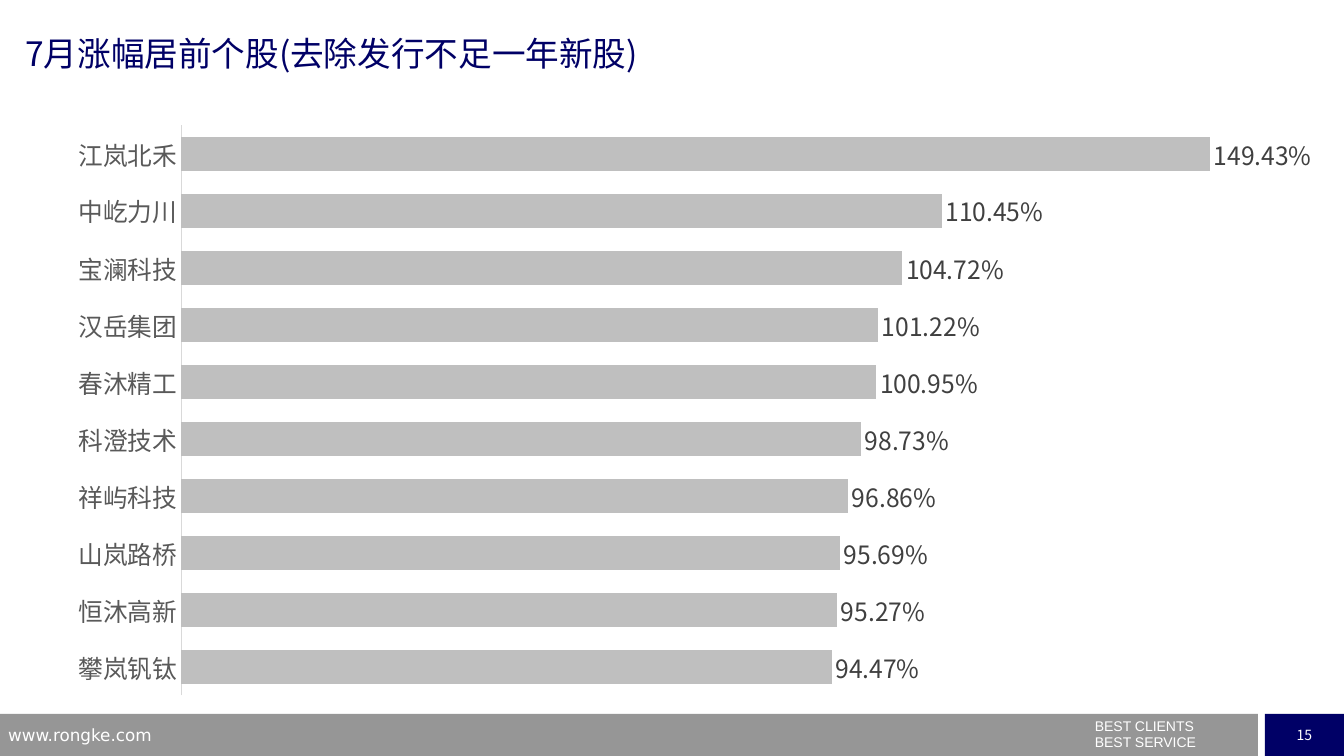
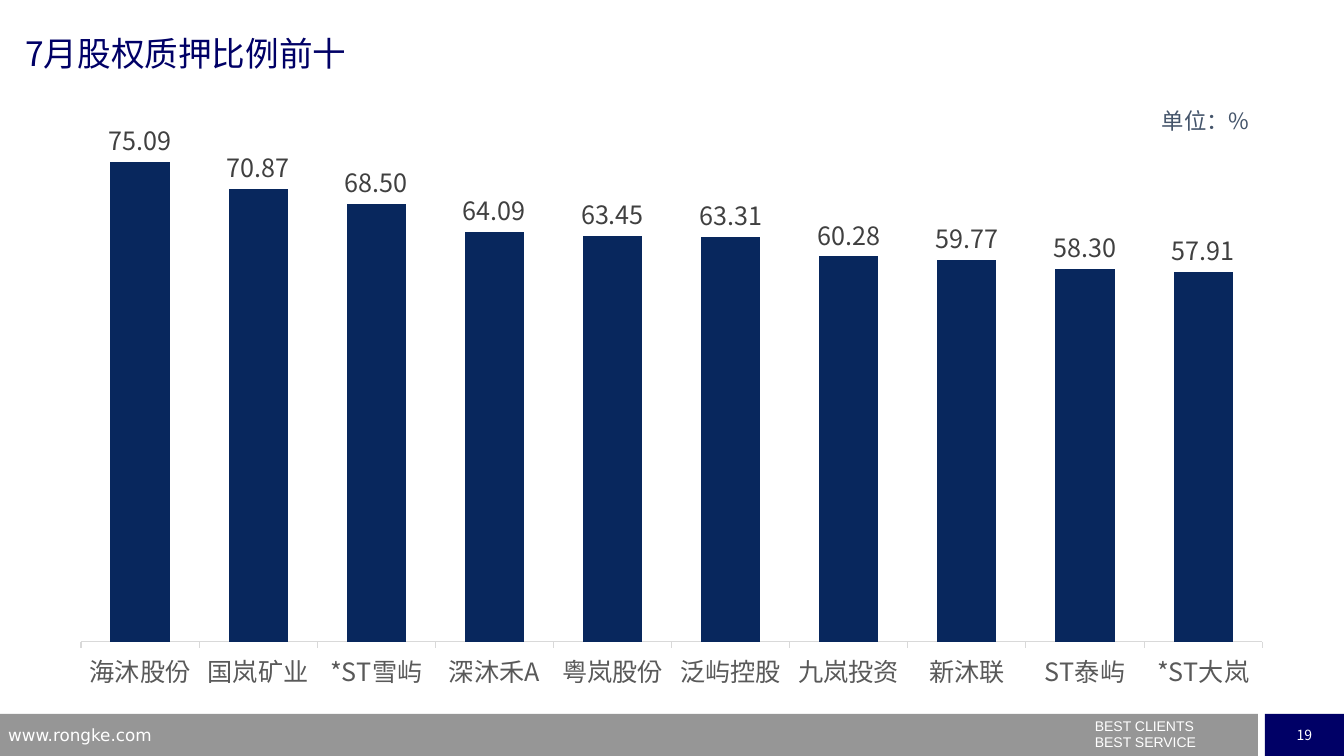
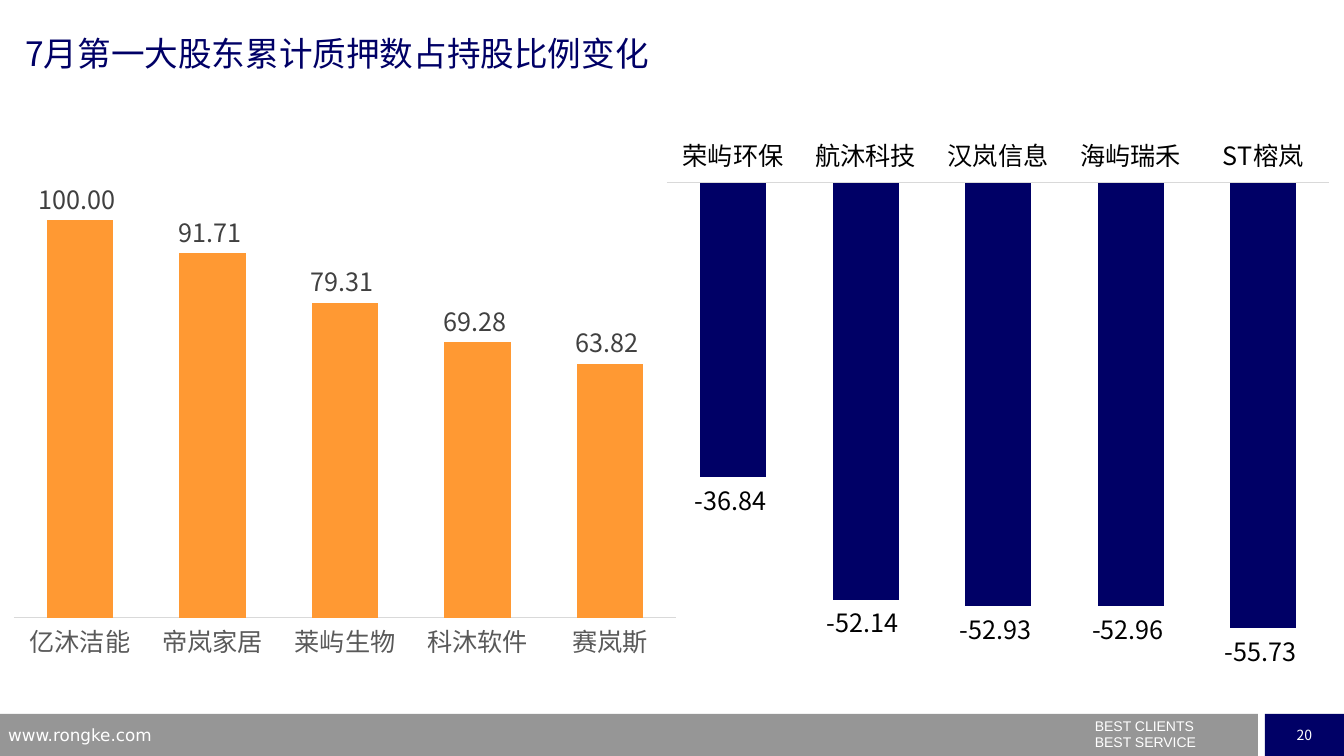
from lxml.etree import SubElement
from pptx import Presentation
from pptx.chart.data import CategoryChartData
from pptx.dml.color import RGBColor
from pptx.enum.chart import XL_CHART_TYPE as ChartType
from pptx.enum.chart import XL_LABEL_POSITION as LabelPosition
from pptx.enum.chart import XL_TICK_LABEL_POSITION as TickLabels
from pptx.enum.chart import XL_TICK_MARK as TickMark
from pptx.enum.shapes import MSO_SHAPE as Shape
from pptx.enum.text import MSO_ANCHOR as Anchor
from pptx.enum.text import MSO_AUTO_SIZE as AutoSize
from pptx.enum.text import PP_ALIGN as Align
from pptx.oxml.ns import qn
from pptx.util import Pt

NAVY = RGBColor(0x00, 0x00, 0x66)
DEEP_BLUE = RGBColor(0x08, 0x27, 0x5D)
ORANGE = RGBColor(0xFF, 0x99, 0x33)
BAND_GREY = RGBColor(0x96, 0x96, 0x96)
BAR_GREY = RGBColor(0xBF, 0xBF, 0xBF)
AXIS_GREY = RGBColor(0xD9, 0xD9, 0xD9)
AXIS_TEXT = RGBColor(0x59, 0x59, 0x59)
LABEL_TEXT = RGBColor(0x40, 0x40, 0x40)
SLATE = RGBColor(0x44, 0x54, 0x6A)
BLACK = RGBColor(0x00, 0x00, 0x00)
WHITE = RGBColor(0xFF, 0xFF, 0xFF)

SANS = "Noto Sans CJK SC"
SANS_JP = "Noto Sans CJK JP"
WIDTH, HEIGHT = 960, 540
FOOTER = (0, 510, WIDTH, 30)
TITLE = (18, 23, 648, 30)
TWO_DECIMALS = "#,##0.00"
PADDED = "#,##0.00_ "


# Text and shapes
def points(box):
    return [Pt(length) for length in box]


def style_font(font, name, size, color):
    """Format Latin and East Asian text alike."""
    font.name = name
    font.size = Pt(size)
    font.color.rgb = color
    SubElement(font._rPr, qn("a:ea")).set("typeface", name)


def write(frame, text, font=SANS, size=10, color=WHITE, align=Align.LEFT,
          anchor=Anchor.TOP, insets=(0, 0, 0, 0), wrap=True,
          line_spacing=None, space_before=0):
    frame.auto_size = AutoSize.NONE
    frame.word_wrap = wrap
    frame.vertical_anchor = anchor
    (frame.margin_left, frame.margin_top,
     frame.margin_right, frame.margin_bottom) = points(insets)
    for index, line in enumerate(text.split("\n")):
        para = frame.add_paragraph() if index else frame.paragraphs[0]
        para.alignment = align
        if line_spacing:
            para.line_spacing = line_spacing
        if index:
            para.space_before = Pt(space_before)
        span = para.add_run()
        span.text = line
        style_font(span.font, font, size, color)


def add_text(page, box, text, **style):
    write(page.shapes.add_textbox(*points(box)).text_frame, text, **style)


def add_band(page, box, color):
    band = page.shapes.add_shape(Shape.RECTANGLE, *points(box))
    band.shadow.inherit = False
    band.fill.solid()
    band.fill.fore_color.rgb = color
    band.line.fill.background()
    return band


# Parts shared by every slide
def add_footer(page, box, number):
    left, top, width, height = box
    number_width, gap = 56.5, 5
    number_left = left + width - number_width
    add_band(page, (left, top, number_left - gap - left, height), BAND_GREY)
    number_band = add_band(page, (number_left, top, number_width, height), NAVY)
    write(number_band.text_frame, str(number), align=Align.CENTER,
          anchor=Anchor.MIDDLE, wrap=False)
    add_text(page, (left + 775, top + 4, 184, 26), "BEST CLIENTS\nBEST SERVICE",
             font="Arial", insets=(7.2, 3.6, 7.2, 3.6),
             line_spacing=0.5, space_before=5.5)
    add_text(page, (left, top + 4, 230, 19), "www.rongke.com",
             font="DejaVu Sans", size=12, insets=(5.8, 3.6, 7.2, 3.6))


def add_page(deck, title, number):
    page = deck.slides.add_slide(deck.slide_layouts[5])
    heading = page.shapes.title
    heading.left, heading.top, heading.width, heading.height = points(TITLE)
    write(heading.text_frame, title, size=24, color=NAVY, anchor=Anchor.MIDDLE)
    add_footer(page, FOOTER, number)
    return page


# Charts
def place_plot(chart, area):
    """Fix the inner plot area, given as fractions of the chart."""
    plot_area = chart._chartSpace.chart.plotArea
    for old in plot_area.findall(qn("c:layout")):
        plot_area.remove(old)
    layout = SubElement(plot_area, qn("c:layout"))
    plot_area.insert(0, layout)
    manual = SubElement(layout, qn("c:manualLayout"))
    settings = [("layoutTarget", "inner"), ("xMode", "edge"), ("yMode", "edge")]
    settings += zip("xywh", area)
    for tag, value in settings:
        SubElement(manual, qn("c:" + tag)).set("val", str(value))


def add_bars(page, box, values, color, kind=ChartType.COLUMN_CLUSTERED,
             number_format=PADDED, font=SANS, gap=100, overlap=-27,
             axis_color=AXIS_TEXT, label_color=LABEL_TEXT, area=None,
             tick=TickMark.NONE, tick_labels=TickLabels.NEXT_TO_AXIS,
             reverse=False, limits=None):
    data = CategoryChartData(number_format=number_format)
    data.categories = list(values)
    data.add_series("Series 1", list(values.values()))
    chart = page.shapes.add_chart(kind, *points(box), data).chart
    chart.has_title = False
    chart.has_legend = False
    style_font(chart.font, font, 18, BLACK)

    categories = chart.category_axis
    categories.reverse_order = reverse
    categories.has_major_gridlines = False
    categories.major_tick_mark = tick
    categories.minor_tick_mark = TickMark.NONE
    categories.tick_label_position = tick_labels
    categories.format.line.color.rgb = AXIS_GREY
    categories.format.line.width = Pt(0.75)
    style_font(categories.tick_labels.font, font, 18, axis_color)

    scale = chart.value_axis
    scale.has_major_gridlines = False
    scale.visible = False
    if limits:
        scale.minimum_scale, scale.maximum_scale = limits

    plot = chart.plots[0]
    plot.vary_by_categories = False
    plot.gap_width = gap
    plot.overlap = overlap
    series = plot.series[0]
    series.invert_if_negative = False
    series.format.fill.solid()
    series.format.fill.fore_color.rgb = color

    plot.has_data_labels = True
    labels = plot.data_labels
    labels.show_value = True
    labels.position = LabelPosition.OUTSIDE_END
    labels.number_format = number_format
    labels.number_format_is_linked = False
    style_font(labels.font, font, 18, label_color)
    if area:
        place_plot(chart, area)


# Slides
def build_gainers(deck):
    page = add_page(deck, "7月涨幅居前个股(去除发行不足一年新股)", 15)
    gains = {
        "江岚北禾": 1.4943, "中屹力川": 1.1045, "宝澜科技": 1.0472,
        "汉岳集团": 1.0122, "春沐精工": 1.0095, "科澄技术": 0.9873,
        "祥屿科技": 0.9686, "山岚路桥": 0.9569, "恒沐高新": 0.9527,
        "攀岚钒钛": 0.9447,
    }
    add_bars(page, (18, 78.5, 919, 430), gains, BAR_GREY,
             kind=ChartType.BAR_CLUSTERED, number_format="0.00%", gap=70,
             overlap=0, reverse=True, area=(0.124, 0.026, 0.876, 0.947))


def build_pledges(deck):
    page = add_page(deck, "7月股权质押比例前十", 19)
    ratios = {
        "海沐股份": 75.09, "国岚矿业": 70.87, "*ST雪屿": 68.5,
        "深沐禾A": 64.09, "粤岚股份": 63.45, "泛屿控股": 63.31,
        "九岚投资": 60.28, "新沐联": 59.77, "ST泰屿": 58.3, "*ST大岚": 57.91,
    }
    add_bars(page, (57.5, 77, 844.5, 424), ratios, DEEP_BLUE,
             number_format=TWO_DECIMALS, font=SANS_JP, tick=TickMark.OUTSIDE,
             limits=(0, 80), area=(0, 0.038, 1, 0.862))
    add_text(page, (830, 76.5, 72, 19.5), "单位：%", size=16, color=SLATE,
             align=Align.JUSTIFY, anchor=Anchor.MIDDLE)


def build_changes(deck):
    page = add_page(deck, "7月第一大股东累计质押数占持股比例变化", 20)
    rises = {"亿沐洁能": 100, "帝岚家居": 91.71, "莱屿生物": 79.31,
             "科沐软件": 69.28, "赛岚斯": 63.82}
    falls = {"荣屿环保": -36.84, "航沐科技": -52.14, "汉岚信息": -52.93,
             "海屿瑞禾": -52.96, "ST榕岚": -55.73}
    add_bars(page, (0, 93, 493, 385), rises, ORANGE)
    add_bars(page, (466.5, 89.5, 493, 391.5), falls, NAVY, axis_color=BLACK,
             label_color=BLACK, tick_labels=TickLabels.HIGH)


def main():
    deck = Presentation()
    deck.slide_width, deck.slide_height = Pt(WIDTH), Pt(HEIGHT)
    build_gainers(deck)
    build_pledges(deck)
    build_changes(deck)
    deck.save("out.pptx")


if __name__ == "__main__":
    main()
